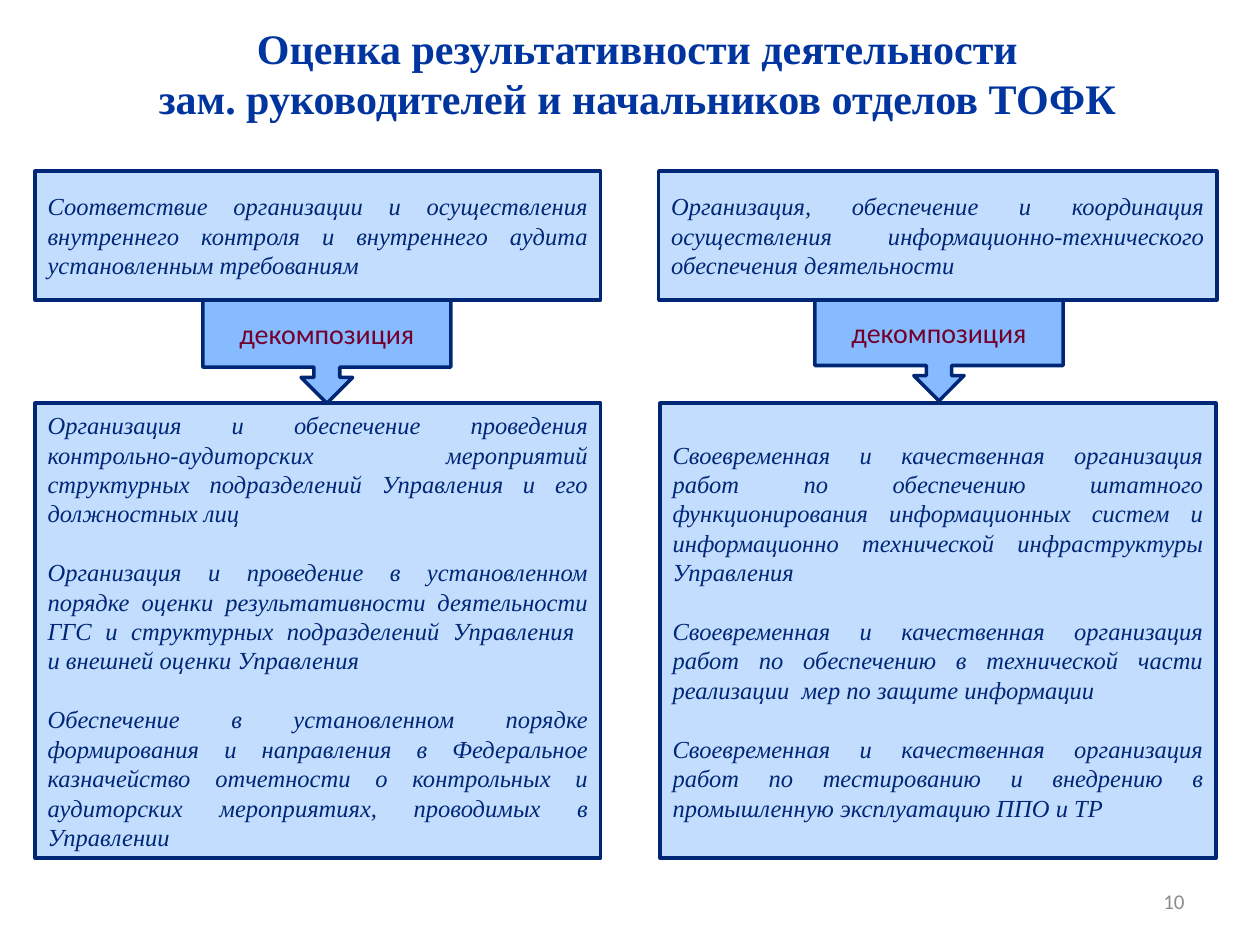
from pptx import Presentation
from pptx.dml.color import RGBColor
from pptx.enum.shapes import MSO_SHAPE as Shape
from pptx.enum.text import MSO_ANCHOR as Anchor, PP_ALIGN as Align
from pptx.util import Cm, Pt

NAVY = RGBColor(0x00, 0x27, 0x76)
TITLE_BLUE = RGBColor(0x00, 0x34, 0x9E)
PALE_BLUE = RGBColor(0xC3, 0xDD, 0xFF)
MID_BLUE = RGBColor(0x87, 0xBB, 0xFF)
MAROON = RGBColor(0x72, 0x00, 0x2C)
GREY = RGBColor(0x8C, 0x8C, 0x8C)

TITLE = {"name": "Times New Roman", "size": Pt(24), "bold": True}
BODY = {"name": "Times New Roman", "size": Pt(14), "italic": True}
CALLOUT = {"name": "Calibri", "size": Pt(16)}
NUMBER = {"name": "Calibri", "size": Pt(12)}

BOX_TOP, BOX_HEIGHT = 3.45, 2.6
DETAIL_TOP, DETAIL_HEIGHT = 8.13, 9.17
CALLOUT_TOP, CALLOUT_WIDTH = BOX_TOP + BOX_HEIGHT, 5

COLUMNS = [
    {
        "goal_span": (0.71, 11.4),
        "detail_span": (0.71, 11.4),
        "callout_left": 4.09,
        "callout_height": 2.08,
        "goal": "Соответствие организации и осуществления внутреннего контроля "
                "и внутреннего аудита установленным требованиям",
        "details": [
            "Организация и обеспечение проведения контрольно-аудиторских мероприятий "
            "структурных подразделений Управления и его должностных лиц",
            "Организация и проведение в установленном порядке оценки результативности "
            "деятельности ГГС и структурных подразделений Управления \n"
            "и внешней оценки Управления",
            "Обеспечение в установленном порядке формирования и направления "
            "в Федеральное казначейство отчетности о контрольных и аудиторских "
            "мероприятиях, проводимых в Управлении",
        ],
    },
    {
        "goal_span": (13.28, 11.25),
        "detail_span": (13.31, 11.2),
        "callout_left": 16.43,
        "callout_height": 2.03,
        "goal": "Организация, обеспечение и координация осуществления "
                "информационно-технического обеспечения деятельности",
        "details": [
            "Своевременная и качественная организация работ по обеспечению штатного "
            "функционирования информационных систем и информационно технической "
            "инфраструктуры Управления",
            "Своевременная и качественная организация работ по обеспечению "
            "в технической части реализации  мер по защите информации",
            "Своевременная и качественная организация работ по тестированию "
            "и внедрению в промышленную эксплуатацию ППО и ТР",
        ],
    },
]


def write(box, texts, font_format, color, align, anchor=Anchor.MIDDLE, gap=0):
    """Fill the box with one paragraph per text, gap points apart."""
    frame = box.text_frame
    frame.word_wrap = True
    frame.vertical_anchor = anchor
    for index, text in enumerate(texts):
        para = frame.add_paragraph() if index else frame.paragraphs[0]
        para.text = text
        para.alignment = align
        para.space_before = Pt(gap if index else 0)
        for span in para.runs:
            for name, value in font_format.items():
                setattr(span.font, name, value)
            span.font.color.rgb = color


def add_block(kind, left, top, width, height, fill):
    block = slide.shapes.add_shape(kind, Cm(left), Cm(top), Cm(width), Cm(height))
    block.shadow.inherit = False
    block.fill.solid()
    block.fill.fore_color.rgb = fill
    block.line.color.rgb = NAVY
    block.line.width = Pt(2)
    return block


deck = Presentation()
deck.slide_width, deck.slide_height = Cm(25.4), Cm(19.05)
slide = deck.slides.add_slide(deck.slide_layouts[6])

title = slide.shapes.add_textbox(Cm(0.3), Cm(0.33), Cm(25.1), Cm(2.31))
write(title, ["Оценка результативности деятельности",
              "зам. руководителей и начальников отделов ТОФК"],
      TITLE, TITLE_BLUE, Align.CENTER, Anchor.TOP)

for column in COLUMNS:
    left, width = column["goal_span"]
    goal = add_block(Shape.RECTANGLE, left, BOX_TOP, width, BOX_HEIGHT, PALE_BLUE)
    write(goal, [column["goal"]], BODY, NAVY, Align.JUSTIFY)

    left, width = column["detail_span"]
    detail = add_block(Shape.RECTANGLE, left, DETAIL_TOP, width, DETAIL_HEIGHT, PALE_BLUE)
    write(detail, column["details"], BODY, NAVY, Align.JUSTIFY, gap=16.8)

    callout = add_block(Shape.DOWN_ARROW_CALLOUT, column["callout_left"], CALLOUT_TOP,
                        CALLOUT_WIDTH, column["callout_height"], MID_BLUE)
    write(callout, ["декомпозиция"], CALLOUT, MAROON, Align.CENTER)

number = slide.shapes.add_textbox(Cm(18.21), Cm(17.65), Cm(5.92), Cm(1.02))
write(number, ["10"], NUMBER, GREY, Align.RIGHT)

deck.save("out.pptx")
